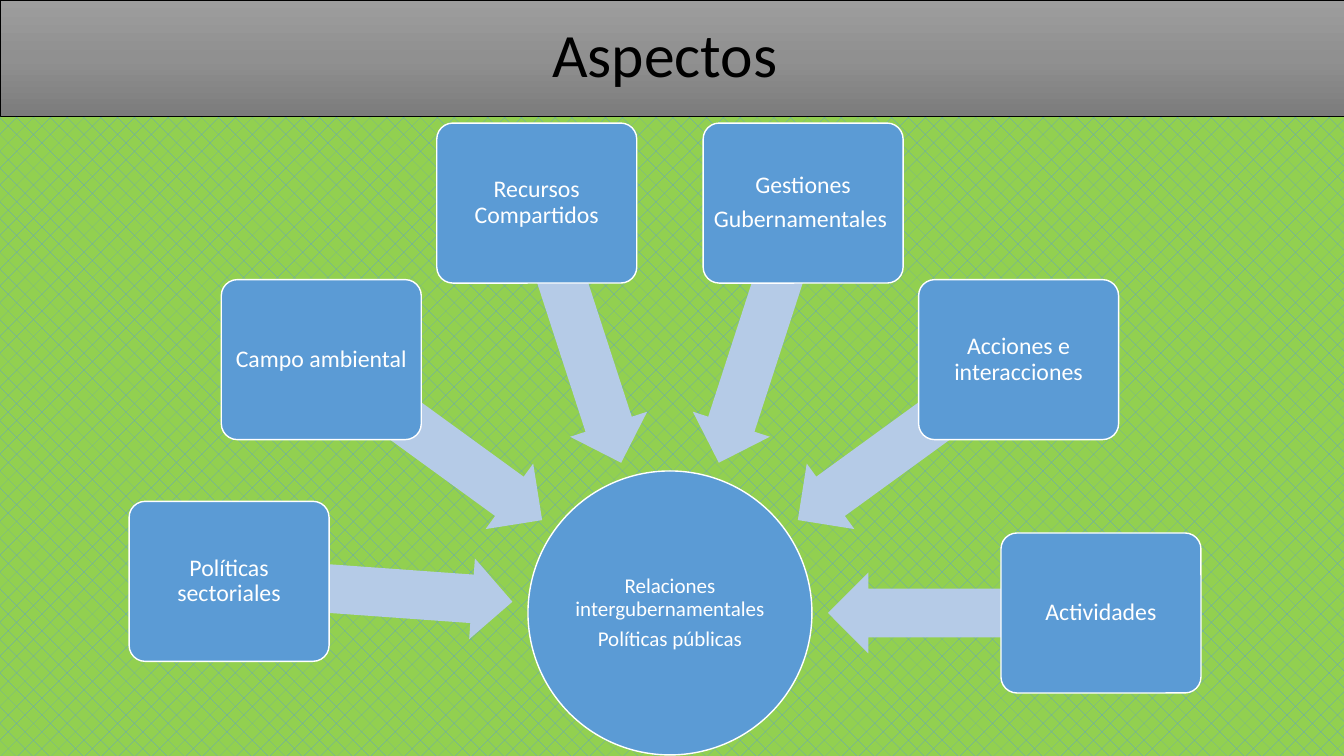
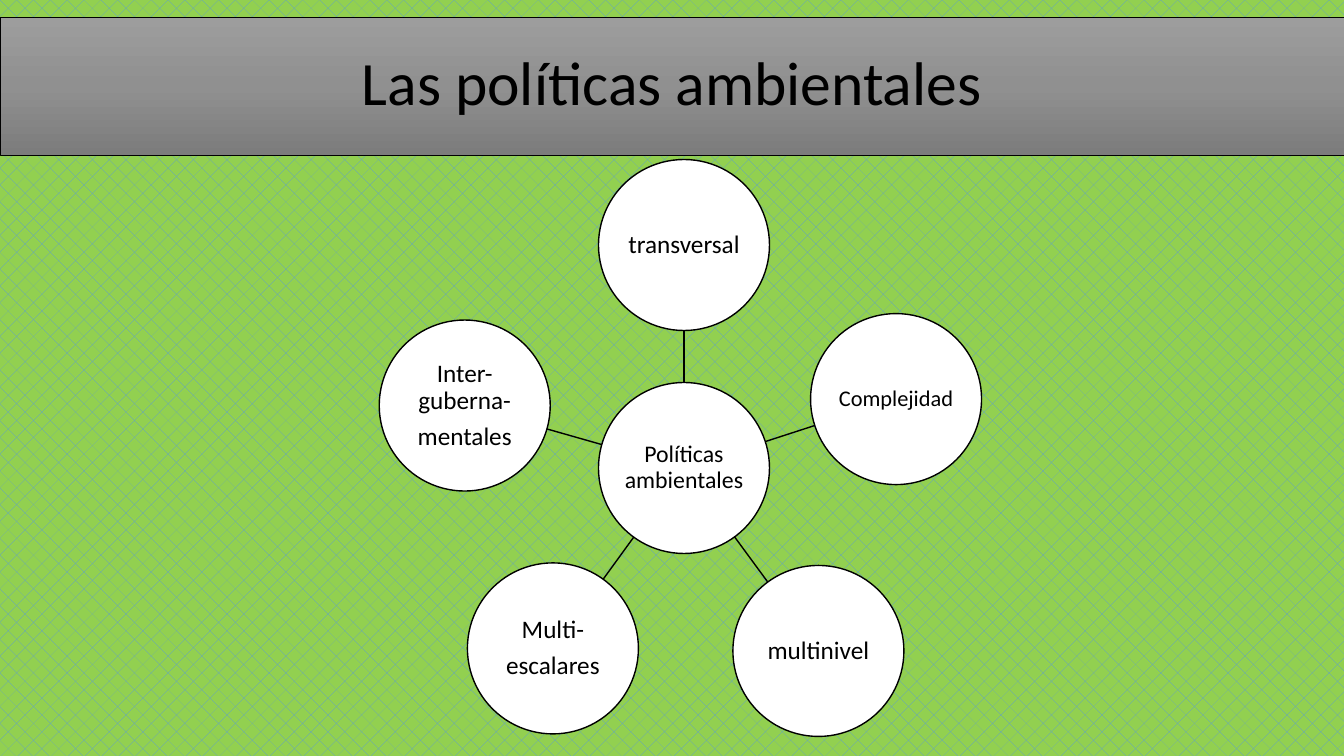
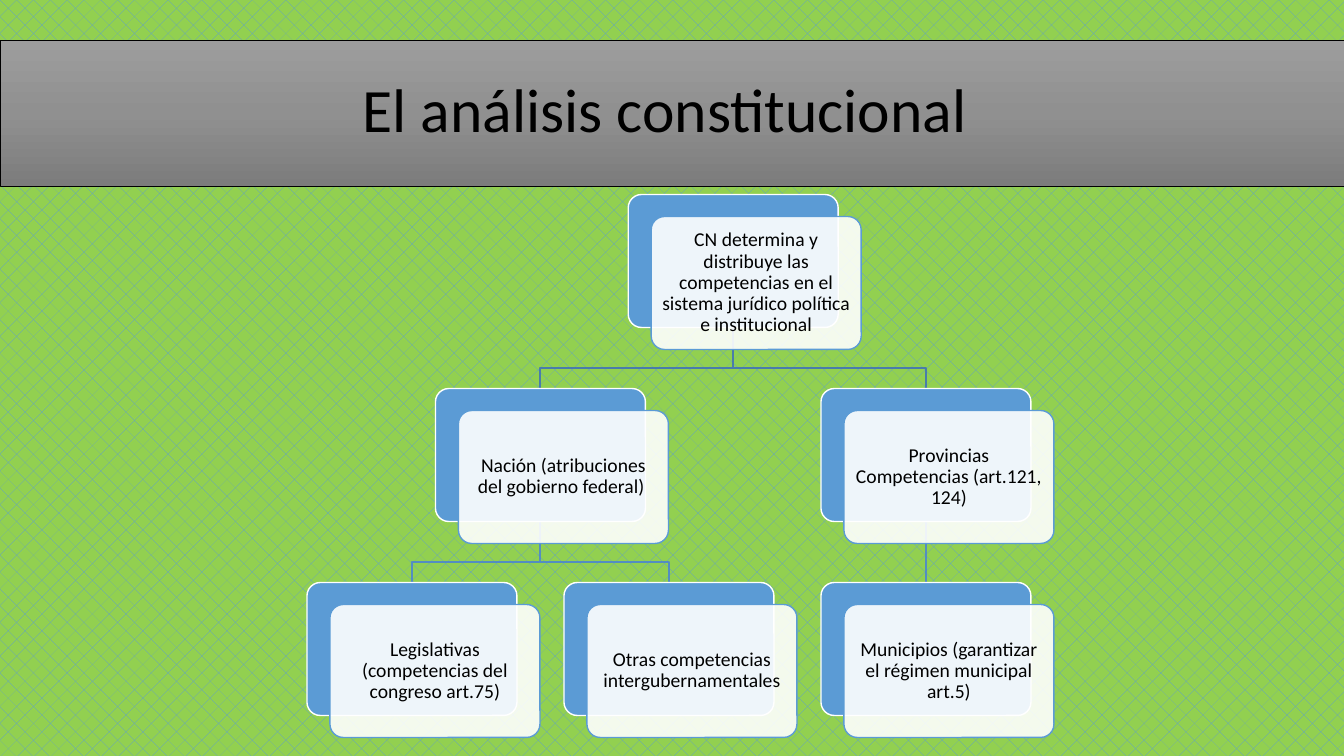
from copy import deepcopy
from math import cos, radians, sin

from lxml import etree
from pptx import Presentation
from pptx.dml.color import RGBColor
from pptx.enum.dml import MSO_PATTERN
from pptx.enum.shapes import MSO_CONNECTOR, MSO_SHAPE
from pptx.enum.text import MSO_ANCHOR, PP_ALIGN
from pptx.oxml.ns import qn
from pptx.util import Pt

RECT, ROUNDED, OVAL = MSO_SHAPE.RECTANGLE, MSO_SHAPE.ROUNDED_RECTANGLE, MSO_SHAPE.OVAL
LEFT_ARROW = MSO_SHAPE.LEFT_ARROW
STRAIGHT = MSO_CONNECTOR.STRAIGHT
DOTTED_DIAMOND = MSO_PATTERN.DOTTED_DIAMOND
MIDDLE, CENTER = MSO_ANCHOR.MIDDLE, PP_ALIGN.CENTER

PX = 914400 / 100.8  # EMU in one px
SLIDE_W, SLIDE_H = 1344, 756


class Theme:
    font = "Calibri"
    green = RGBColor.from_string("92D050")
    blue = RGBColor.from_string("5B9BD5")
    pale_blue = RGBColor.from_string("B5CBE7")
    white = RGBColor.from_string("FFFFFF")
    black = RGBColor.from_string("000000")
    upper_branch = RGBColor.from_string("497CAB")
    lower_branch = RGBColor.from_string("538DC1")
    band_stops = [(0, RGBColor.from_string("9D9D9D")),
                  (0.5, RGBColor.from_string("909090")),
                  (1, RGBColor.from_string("7C7C7C"))]
    title_size, hub_size, box_size, card_size = 44, 15, 17, 14


def add_panel(slide, preset, center, size, fill, line=None, text="",
              type_size=0, color=Theme.black, inset=0):
    """Add a filled shape around its center, with optional centred text."""
    (cx, cy), (w, h) = center, size
    panel = slide.shapes.add_shape(preset, round((cx - w / 2) * PX), round((cy - h / 2) * PX),
                                   round(w * PX), round(h * PX))
    panel.shadow.inherit = False
    panel.fill.solid()
    panel.fill.fore_color.rgb = fill
    if line is None:
        panel.line.fill.background()
    else:
        panel.line.color.rgb = line
        panel.line.width = Pt(1)
    if preset == ROUNDED:
        panel.adjustments[0] = 0.1
    if text:
        frame = panel.text_frame
        frame.text = text
        frame.word_wrap = True
        frame.vertical_anchor = MIDDLE
        frame.margin_left = frame.margin_right = round(inset * PX)
        frame.margin_top = frame.margin_bottom = round(inset * PX)
        for paragraph in frame.paragraphs:
            paragraph.alignment = CENTER
            paragraph.line_spacing = 0.9
            paragraph.space_after = Pt(round(0.35 * type_size, 1))
            paragraph.font.name = Theme.font
            paragraph.font.size = Pt(type_size)
            paragraph.font.color.rgb = color
    return panel


def add_line(slide, start, end, color):
    """Add a straight line between two points."""
    line = slide.shapes.add_connector(STRAIGHT, *(round(v * PX) for v in (*start, *end)))
    line.line.color.rgb = color
    line.line.width = Pt(1)
    etree.SubElement(line._element.spPr, qn("a:effectLst"))


presentation = Presentation()
presentation.slide_width = round(SLIDE_W * PX)
presentation.slide_height = round(SLIDE_H * PX)

# Background and title band of every slide: title, band top, band height
slides = []
for title, top, height in [("Aspectos ", 0, 116),
                           ("Las políticas ambientales", 17, 138),
                           ("El análisis constitucional ", 40, 146)]:
    slide = presentation.slides.add_slide(presentation.slide_layouts[6])
    slides.append(slide)
    backdrop = slide.background.fill
    backdrop.patterned()
    backdrop.pattern = DOTTED_DIAMOND
    backdrop.fore_color.rgb = Theme.blue
    backdrop.back_color.rgb = Theme.green

    band = add_panel(slide, RECT, (SLIDE_W / 2, top + height / 2), (SLIDE_W, height),
                     Theme.white, Theme.black, title, Theme.title_size, inset=8)
    band.line.width = Pt(0.5)
    band.fill.gradient()
    band.fill.gradient_angle = 270
    stop_list = band._element.spPr.find(".//" + qn("a:gsLst"))
    stop_list.insert(1, deepcopy(stop_list[0]))
    for stop, (position, shade) in zip(band.fill.gradient_stops, Theme.band_stops):
        stop.position = position
        stop.color.rgb = shade

aspects, policies, constitution = slides

# Slide 1: boxes around a hub, each with an arrow pointing inwards
hub_x, hub_y = 670, 613
arrow_tip = 158  # distance from the hub's center
add_panel(aspects, OVAL, (hub_x, hub_y), (284, 284), Theme.blue, Theme.white,
          "Relaciones intergubernamentales\nPolíticas públicas",
          Theme.hub_size, Theme.white, 1)
for aspect, angle, distance in [("Políticas sectoriales", 184.1, 442),
                                ("Campo ambiental", 216, 431),
                                ("Recursos Compartidos", 252, 431),
                                ("Gestiones\nGubernamentales ", 288, 431),
                                ("Acciones e interacciones", 324, 431),
                                ("Actividades", 0, 431)]:
    dx, dy = cos(radians(angle)), sin(radians(angle))
    reach = (arrow_tip + distance) / 2
    arrow = add_panel(aspects, LEFT_ARROW, (hub_x + reach * dx, hub_y + reach * dy),
                      (distance - arrow_tip, 81), Theme.pale_blue)
    arrow.adjustments[0], arrow.adjustments[1] = 0.6, 0.5
    arrow.rotation = angle
    add_panel(aspects, ROUNDED, (hub_x + distance * dx, hub_y + distance * dy), (200, 160),
              Theme.blue, Theme.white, aspect, Theme.box_size, Theme.white, 4)

# Slide 2: circles around a central circle
core_x, core_y, diameter = 684, 468, 171
radius = diameter / 2
add_panel(policies, OVAL, (core_x, core_y), (diameter, diameter), Theme.white, Theme.black,
          "Políticas ambientales", 17, inset=1)
for trait, angle, distance, type_size in [("transversal", 270, 223, 18),
                                          ("Complejidad", 342, 223, 16),
                                          ("multinivel", 53.7, 227, 18),
                                          ("Multi-\nescalares", 126, 223, 18),
                                          ("Inter-guberna-\nmentales", 195.9, 228, 18)]:
    dx, dy = cos(radians(angle)), sin(radians(angle))
    inner, outer, center = [(core_x + reach * dx, core_y + reach * dy)
                            for reach in (radius, distance - radius, distance)]
    add_line(policies, inner, outer, Theme.black)
    add_panel(policies, OVAL, center, (diameter, diameter), Theme.white, Theme.black,
              trait, type_size, inset=1)

# Slide 3: tree of double cards, placed by column and level
card_w, card_h = 210, 133
first_x, first_y = 412, 261  # center of column 0, level 0
column_step, level_step = 257, 194
front_dx, front_dy = 23, 22
cards = {
    "root": (1.25, 0, "CN determina y distribuye las competencias en el sistema "
                      "jurídico política e institucional"),
    "nation": (0.5, 1, "Nación (atribuciones del gobierno federal) "),
    "legislative": (0, 2, "Legislativas (competencias del congreso art.75)"),
    "other": (1, 2, "Otras competencias intergubernamentales"),
    "provinces": (2, 1, "Provincias Competencias (art.121, 124)"),
    "towns": (2, 2, "Municipios (garantizar el régimen municipal art.5)"),
}
centers = {key: (first_x + column * column_step, first_y + level * level_step)
           for key, (column, level, _) in cards.items()}

# Branches lie behind the cards
for parent, child in [("provinces", "towns"), ("root", "provinces"), ("nation", "other"),
                      ("nation", "legislative"), ("root", "nation")]:
    color = Theme.upper_branch if parent == "root" else Theme.lower_branch
    (start_x, parent_y), (end_x, child_y) = centers[parent], centers[child]
    start_y, end_y = parent_y + card_h / 2, child_y - card_h / 2
    if start_x == end_x:
        add_line(constitution, (start_x, start_y), (end_x, end_y), color)
        continue
    bend_y = end_y - 20
    outline = constitution.shapes.build_freeform(start_x, start_y, scale=PX)
    outline.add_line_segments([(start_x, bend_y), (end_x, bend_y), (end_x, end_y)], close=False)
    branch = outline.convert_to_shape()
    branch.shadow.inherit = False
    branch.fill.background()
    branch.line.color.rgb = color
    branch.line.width = Pt(1)

for key, (_, _, text) in cards.items():
    x, y = centers[key]
    add_panel(constitution, ROUNDED, (x, y), (card_w, card_h), Theme.blue, Theme.white)
    front = add_panel(constitution, ROUNDED, (x + front_dx, y + front_dy), (card_w, card_h),
                      Theme.white, Theme.blue, text, Theme.card_size, inset=6)
    front_color = front._element.spPr.find(qn("a:solidFill"))[0]
    etree.SubElement(front_color, qn("a:alpha"), val="90000")

presentation.save("out.pptx")
